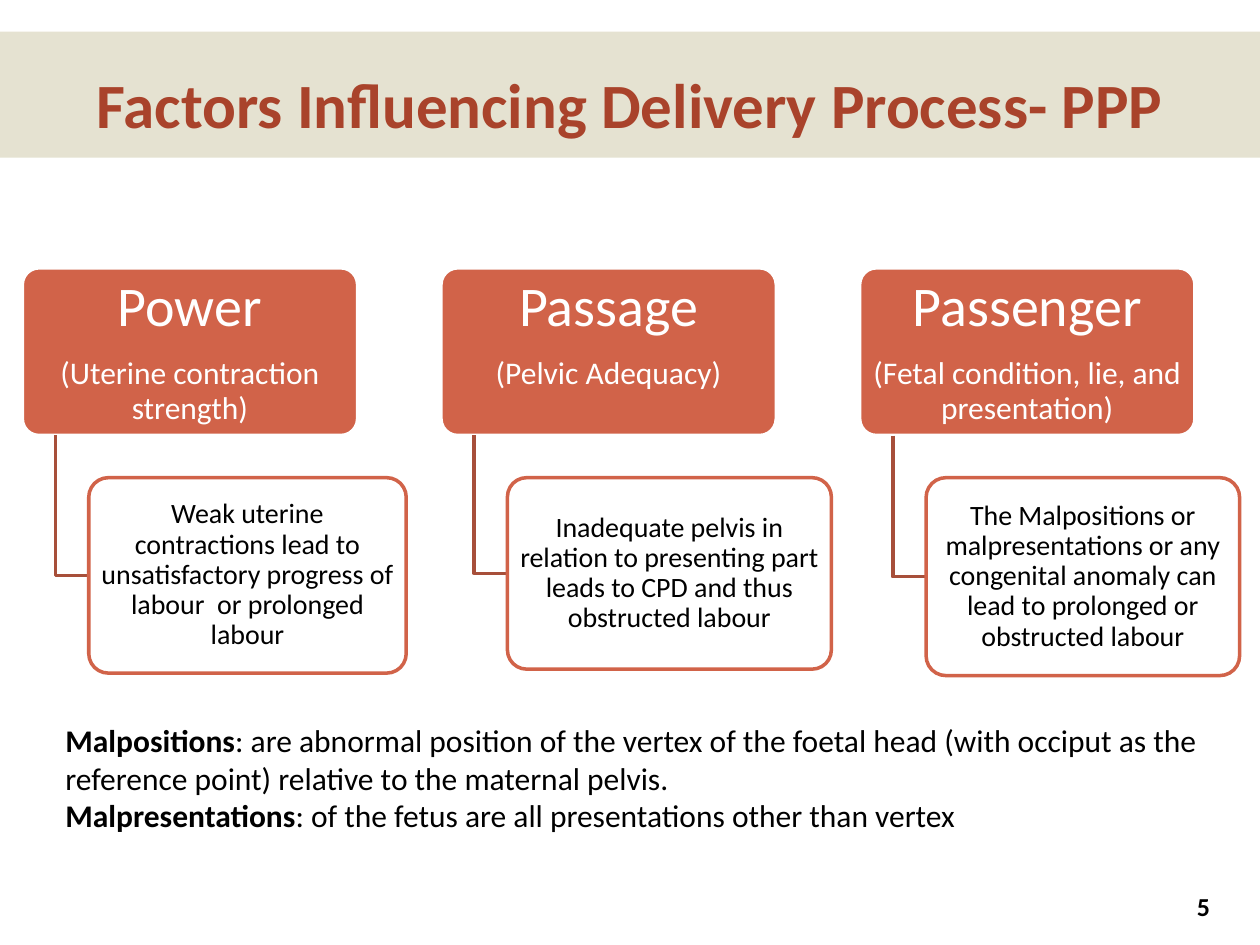
from dataclasses import dataclass
from pptx import Presentation
from pptx import util as u
from pptx.dml import color
from pptx.enum import shapes, text
from pptx.oxml import ns
from lxml import etree

FONT = "Calibri"
LEFT, TOP, STEP = 0.45, 5.4, 8.44
HEAD_W, HEAD_H = 6.76, 3.38
CARD_X, CARD_Y, STEM_X = 1.34, 9.63, 0.67
BRICK, WHITE, BLACK = "D16349", "FFFFFF", "000000"


@dataclass
class Factor:
    name: str
    hint: str
    risk: str
    wide: float
    high: float


@dataclass
class Run:
    words: str
    size: float
    tint: str = BLACK
    bold: bool = False


FACTORS = [
    Factor("Power", "(Uterine contraction strength)",
           "Weak uterine contractions lead to unsatisfactory progress of "
           "labour  or prolonged labour", 6.4, 3.94),
    Factor("Passage", "(Pelvic Adequacy)",
           "Inadequate pelvis in relation to presenting part leads to CPD "
           "and thus obstructed labour", 6.53, 3.86),
    Factor("Passenger", "(Fetal condition, lie, and presentation)",
           "The Malpositions or malpresentations or any congenital anomaly "
           "can lead to prolonged or obstructed labour", 6.32, 3.99),
]
TERMS = [
    ("Malpositions", ": are abnormal position of the vertex of the foetal head "
     "(with occiput as the reference point) relative to the maternal pelvis."),
    ("Malpresentations", ": of the fetus are all presentations other than vertex"),
]


def rgb(code: str) -> color.RGBColor:
    return color.RGBColor.from_string(code)


def apply(item, vals: dict) -> None:
    for key, val in vals.items():
        setattr(item, key, val)


def paint(shape, fill: str, alpha: int = 100) -> None:
    shape.shadow.inherit = False
    shape.fill.solid()
    shape.fill.fore_color.rgb = rgb(fill)
    if alpha < 100:
        tone = shape.fill._xPr.find(".//" + ns.qn("a:srgbClr"))
        etree.SubElement(tone, ns.qn("a:alpha"), val=str(alpha * 1000))


def edge(shape, tint: str) -> None:
    shape.line.color.rgb = rgb(tint)
    shape.line.width = u.Pt(2)


def write(shape, paras: list, align, anchor, pad=(0.25, 0.13), form=None) -> None:
    frame = shape.text_frame
    side, end = map(u.Cm, pad)
    apply(frame, dict(word_wrap=True, vertical_anchor=anchor, margin_left=side,
                      margin_right=side, margin_top=end, margin_bottom=end))
    for num, runs in enumerate(paras):
        para = frame.add_paragraph() if num else frame.paragraphs[0]
        apply(para, dict(alignment=align, **(form or {})))
        if form and num < len(paras) - 1:
            para.space_after = u.Pt(round(runs[0].size * 0.35, 1))
        for part in runs:
            run = para.add_run()
            run.text = part.words
            apply(run.font, dict(name=FONT, size=u.Pt(part.size), bold=part.bold))
            run.font.color.rgb = rgb(part.tint)


def label(slide, spot: tuple, paras: list, align, anchor) -> None:
    write(slide.shapes.add_textbox(*map(u.Cm, spot)), paras, align, anchor)


def panel(slide, spot: tuple, fill: str, tint: str, alpha: int = 100):
    box = slide.shapes.add_shape(shapes.MSO_SHAPE.ROUNDED_RECTANGLE, *map(u.Cm, spot))
    box.adjustments[0] = 0.1
    paint(box, fill, alpha)
    edge(box, tint)
    return box


def stem(slide, left: float, right: float, top: float, low: float) -> None:
    pen = slide.shapes.build_freeform(u.Cm(left), u.Cm(top))
    pen.add_line_segments([(u.Cm(left), u.Cm(low)), (u.Cm(right), u.Cm(low))], close=False)
    line = pen.convert_to_shape()
    line.shadow.inherit = False
    line.fill.background()
    edge(line, "A74F3A")


def draw(slide, item: Factor, left: float) -> None:
    mid, tight = text.PP_ALIGN.CENTER, dict(line_spacing=0.9)
    head = panel(slide, (left, TOP, HEAD_W, HEAD_H), BRICK, WHITE)
    write(head, [[Run(item.name, 32, WHITE)], [Run(item.hint, 18, WHITE)]],
          mid, text.MSO_ANCHOR.TOP, (0.18, 0.1), tight)
    stem(slide, left + STEM_X, left + CARD_X, TOP + HEAD_H, CARD_Y + item.high / 2)
    card = panel(slide, (left + CARD_X, CARD_Y, item.wide, item.high), WHITE, BRICK, 90)
    write(card, [[Run(item.risk, 16)]], mid, text.MSO_ANCHOR.MIDDLE, (0.08, 0.05), tight)


def main() -> None:
    deck = Presentation()
    apply(deck, dict(slide_width=u.Cm(25.4), slide_height=u.Cm(19.05)))
    slide = deck.slides.add_slide(deck.slide_layouts[6])
    align, anchor = text.PP_ALIGN, text.MSO_ANCHOR

    band = slide.shapes.add_shape(shapes.MSO_SHAPE.RECTANGLE,
                                  *map(u.Cm, (0, 0.64, 25.4, 2.54)))
    paint(band, "DDD9C3", 76)
    band.line.fill.background()
    label(slide, (22.2, 17.86, 2.44, 0.81), [[Run("5", 14.8, bold=True)]],
          align.RIGHT, anchor.MIDDLE)
    label(slide, (0.76, 0.64, 23.88, 2.34),
          [[Run("Factors Influencing Delivery Process- PPP", 36, "A9432B", True)]],
          align.CENTER, anchor.BOTTOM)
    for num, item in enumerate(FACTORS):
        draw(slide, item, LEFT + num * STEP)
    label(slide, (1.07, 14.4, 24.13, 3.33),
          [[Run(term, 18, bold=True), Run(rest, 18)] for term, rest in TERMS],
          align.LEFT, anchor.TOP)
    deck.save("out.pptx")


if __name__ == "__main__":
    main()
